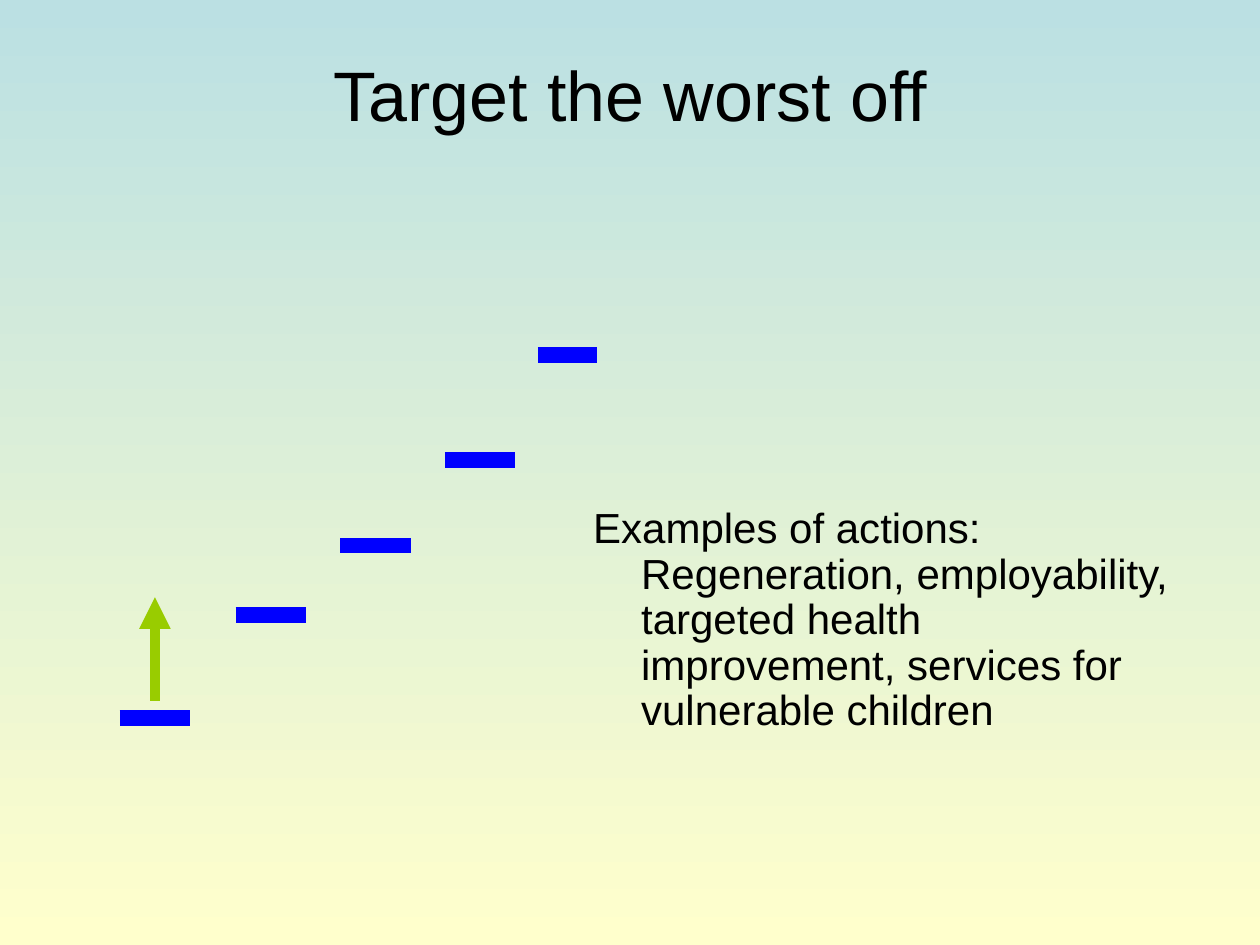
from lxml.etree import SubElement
from pptx import Presentation
from pptx.dml.color import RGBColor
from pptx.enum.shapes import MSO_CONNECTOR
from pptx.enum.text import MSO_ANCHOR, PP_ALIGN
from pptx.oxml.ns import qn
from pptx.util import Inches, Pt

TITLE = "Target the worst off"
ACTIONS = ("Examples of actions: Regeneration, employability, targeted health "
           "improvement, services for vulnerable children")
BACKGROUND = ["BBE0E3", "FFFFCC"]
BAR_COLOR, ARROW_COLOR, TEXT_COLOR = "0000FF", "99CC00", "000000"
BAR_WIDTH = 0.56
STEPS = [(0.95, 5.7, BAR_WIDTH), (1.87, 4.88, BAR_WIDTH), (2.7, 4.33, BAR_WIDTH),
         (3.53, 3.65, BAR_WIDTH), (4.27, 2.82, 0.47)]
ARROW_GAP, ARROW_LENGTH = 0.14, 0.82


def color(value):
    return RGBColor.from_string(value)


def add_text(page, text, left, top, width, height, size,
             align=PP_ALIGN.LEFT, spacing=1.0, hanging=0):
    box = page.shapes.add_textbox(*map(Inches, (left, top, width, height)))
    frame = box.text_frame
    frame.word_wrap = True
    frame.vertical_anchor = MSO_ANCHOR.TOP
    para = frame.paragraphs[0]
    para.alignment = align
    para.line_spacing = spacing
    if hanging:
        properties = para._p.get_or_add_pPr()
        properties.set("marL", str(Inches(hanging)))
        properties.set("indent", str(-Inches(hanging)))
    span = para.add_run()
    span.text = text
    span.font.name = "Arial"
    span.font.size = Pt(size)
    span.font.color.rgb = color(TEXT_COLOR)


def add_line(page, start, end, line_color, weight, arrow=False):
    line = page.shapes.add_connector(MSO_CONNECTOR.STRAIGHT,
                                     *map(Inches, (*start, *end)))
    line.line.color.rgb = color(line_color)
    line.line.width = Pt(weight)
    if arrow:
        SubElement(line.line._get_or_add_ln(), qn("a:tailEnd"), type="triangle")
    SubElement(line._element.spPr, qn("a:effectLst"))


def main():
    deck = Presentation()
    deck.slide_width, deck.slide_height = Inches(10), Inches(7.5)
    page = deck.slides.add_slide(deck.slide_layouts[6])

    fill = page.background.fill
    fill.gradient()
    fill.gradient_angle = 270
    for stop, value in zip(fill.gradient_stops, BACKGROUND):
        stop.color.rgb = color(value)

    add_text(page, TITLE, 0.5, 0.36, 9, 1.19, 40, align=PP_ALIGN.CENTER)
    add_text(page, ACTIONS, 4.61, 3.98, 4.85, 2.75, 24, spacing=0.9, hanging=0.38)

    for left, level, width in STEPS:
        add_line(page, (left, level), (left + width, level), BAR_COLOR, 9)

    left, level, width = STEPS[0]
    middle, bottom = left + width / 2, level - ARROW_GAP
    add_line(page, (middle, bottom), (middle, bottom - ARROW_LENGTH),
             ARROW_COLOR, 6, arrow=True)

    deck.save("out.pptx")


if __name__ == "__main__":
    main()
